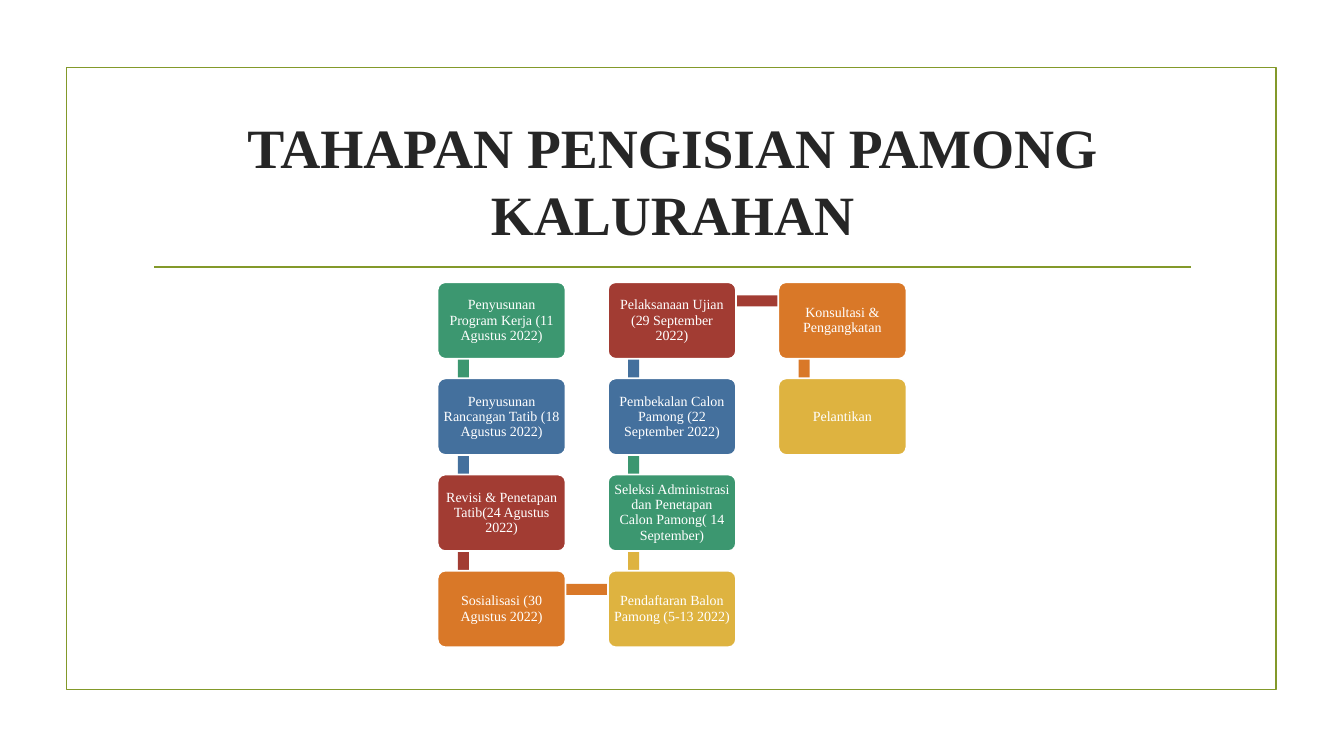
from dataclasses import dataclass

from pptx import Presentation
from pptx import util as u
from pptx.dml.color import RGBColor
from pptx.enum import shapes, text

OLIVE = RGBColor(0x83, 0x99, 0x2A)
INK = RGBColor(0x26, 0x26, 0x26)
WHITE = RGBColor(0xFF, 0xFF, 0xFF)
GREEN = RGBColor(0x3C, 0x97, 0x70)
BLUE = RGBColor(0x44, 0x70, 0x9D)
RED = RGBColor(0xA2, 0x3C, 0x33)
ORANGE = RGBColor(0xD9, 0x78, 0x28)
YELLOW = RGBColor(0xDE, 0xB3, 0x40)
STEP_COLORS = (GREEN, BLUE, RED, ORANGE, YELLOW)

FONT = "Times New Roman"
GRID_LEFT, GRID_TOP = 4.34, 2.8
COLUMN_PITCH, ROW_PITCH = 1.69, 0.954
BOX_WIDTH, BOX_HEIGHT = 1.27, 0.76
BAR = 0.11


@dataclass(frozen=True)
class Step:
    """One stage of the process and its cell in the grid."""

    label: str
    column: int
    row: int

    @property
    def left(self) -> float:
        """Return the left edge of the cell in inches."""
        return GRID_LEFT + self.column * COLUMN_PITCH

    @property
    def top(self) -> float:
        """Return the top edge of the cell in inches."""
        return GRID_TOP + self.row * ROW_PITCH


STEPS = (
    Step("Penyusunan Program Kerja (11 Agustus 2022)", 0, 0),
    Step("Penyusunan Rancangan Tatib (18 Agustus 2022)", 0, 1),
    Step("Revisi & Penetapan Tatib(24 Agustus 2022)", 0, 2),
    Step("Sosialisasi (30 Agustus 2022)", 0, 3),
    Step("Pendaftaran Balon Pamong (5-13 2022)", 1, 3),
    Step("Seleksi Administrasi dan Penetapan Calon Pamong( 14 September)", 1, 2),
    Step("Pembekalan Calon Pamong (22 September 2022)", 1, 1),
    Step("Pelaksanaan Ujian (29 September 2022)", 1, 0),
    Step("Konsultasi & Pengangkatan", 2, 0),
    Step("Pelantikan", 2, 1),
)


def write(shape, content: str, *, size: float, color: RGBColor,
          bold: bool = False, spacing: float = 1.0, inset: float = 0.1) -> None:
    """Put centred, formatted text into a shape."""
    frame = shape.text_frame
    frame.word_wrap = True
    frame.auto_size = text.MSO_AUTO_SIZE.NONE
    frame.vertical_anchor = text.MSO_ANCHOR.MIDDLE
    frame.margin_left = frame.margin_right = u.Inches(inset)
    frame.margin_top = frame.margin_bottom = u.Inches(min(inset, 0.05))
    paragraph = frame.paragraphs[0]
    paragraph.text = content
    paragraph.alignment = text.PP_ALIGN.CENTER
    paragraph.line_spacing = spacing
    font = paragraph.font
    font.name, font.size, font.bold = FONT, u.Pt(size), bold
    font.color.rgb = color


def add_block(slide, kind, left: float, top: float, width: float, height: float,
              *, fill: RGBColor | None = None, line: RGBColor | None = None):
    """Add a preset shape with an optional fill and outline."""
    shape = slide.shapes.add_shape(kind, *map(u.Inches, (left, top, width, height)))
    shape.shadow.inherit = False
    if fill is None:
        shape.fill.background()
    else:
        shape.fill.solid()
        shape.fill.fore_color.rgb = fill
    if line is None:
        shape.line.fill.background()
    else:
        shape.line.color.rgb = line
        shape.line.width = u.Pt(1.25)
    return shape


def add_bar(slide, step: Step, following: Step, color: RGBColor) -> None:
    """Add the bar that leads from one step to the following one."""
    if step.column == following.column:
        top = min(step.top, following.top) + 0.18
        area = (step.left + 0.2, top, BAR, ROW_PITCH)
    else:
        area = (step.left + 0.26, step.top + 0.13, COLUMN_PITCH, BAR)
    add_block(slide, shapes.MSO_SHAPE.RECTANGLE, *area, fill=color)


def add_step(slide, step: Step, color: RGBColor) -> None:
    """Add the labelled rounded box of a step."""
    box = add_block(slide, shapes.MSO_SHAPE.ROUNDED_RECTANGLE, step.left, step.top,
                    BOX_WIDTH, BOX_HEIGHT, fill=color, line=WHITE)
    box.adjustments[0] = 0.1
    write(box, step.label, size=10, color=WHITE, spacing=0.9, inset=0.03)


def add_heading(slide) -> None:
    """Place the title and the rule below it."""
    title = slide.shapes.title
    title.left, title.top, title.width, title.height = map(
        u.Inches, (1.42, 1.07, 10.5, 1.43))
    write(title, "TAHAPAN PENGISIAN PAMONG KALURAHAN", size=39.6, color=INK, bold=True)
    rule = slide.shapes.add_connector(
        shapes.MSO_CONNECTOR.STRAIGHT, *map(u.Inches, (1.53, 2.65, 11.81, 2.65)))
    rule.line.color.rgb = OLIVE
    rule.line.width = u.Pt(1.25)
    properties = rule.element.spPr
    properties.append(properties.makeelement(
        "{http://schemas.openxmlformats.org/drawingml/2006/main}effectLst", {}))


def main() -> None:
    """Build the slide and save it."""
    presentation = Presentation()
    presentation.slide_width = u.Inches(13.33)
    presentation.slide_height = u.Inches(7.5)
    slide = presentation.slides.add_slide(presentation.slide_layouts[5])
    add_block(slide, shapes.MSO_SHAPE.RECTANGLE, 0.66, 0.67, 12, 6.17, line=OLIVE)
    add_heading(slide)
    for index, step in enumerate(STEPS):
        color = STEP_COLORS[index % len(STEP_COLORS)]
        if index + 1 < len(STEPS):
            add_bar(slide, step, STEPS[index + 1], color)
        add_step(slide, step, color)
    presentation.save("out.pptx")


if __name__ == "__main__":
    main()
